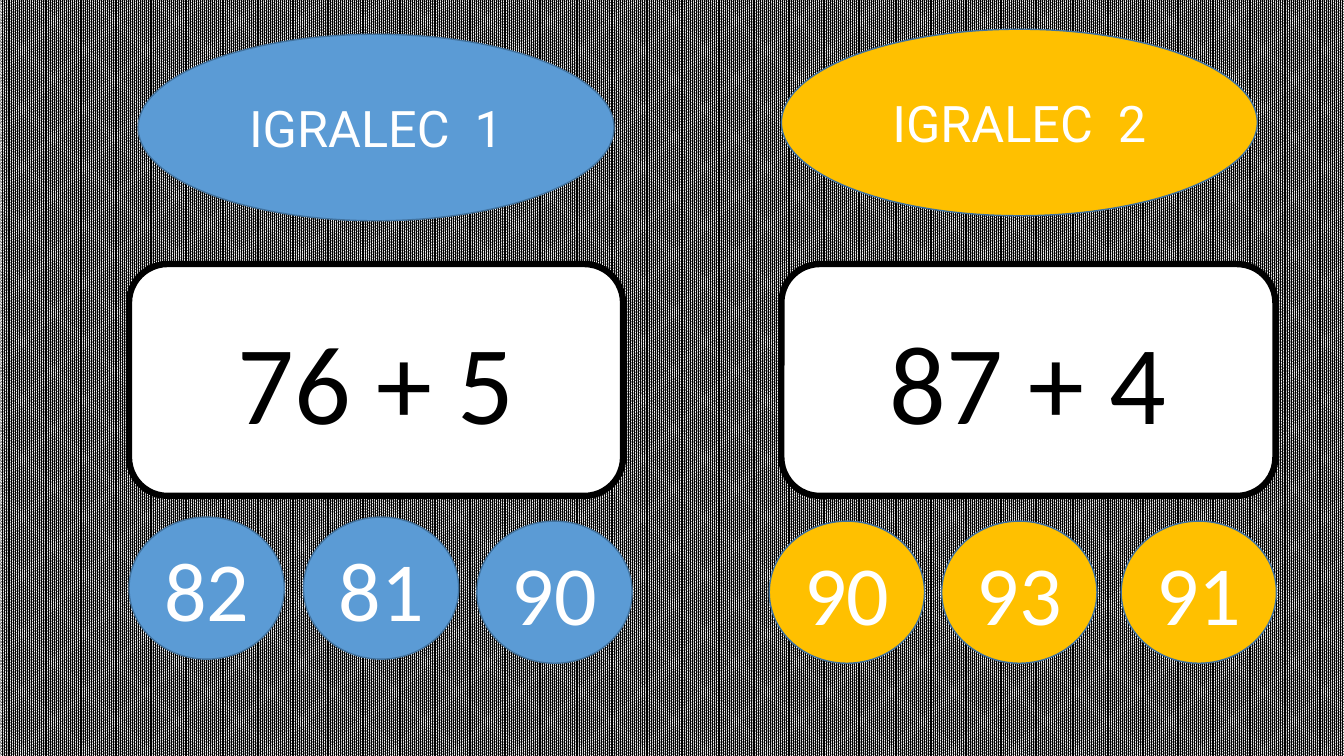
from dataclasses import dataclass

from pptx import Presentation
from pptx.dml.color import RGBColor
from pptx.enum.dml import MSO_PATTERN
from pptx.enum.shapes import MSO_SHAPE as Preset
from pptx.enum.text import MSO_ANCHOR as Anchor, PP_ALIGN as Align
from pptx.util import Inches, Pt


@dataclass(frozen=True)
class Theme:
    black: RGBColor = RGBColor.from_string("000000")
    white: RGBColor = RGBColor.from_string("FFFFFF")
    blue: RGBColor = RGBColor.from_string("5B9BD5")
    gold: RGBColor = RGBColor.from_string("FFC000")
    outline: RGBColor = RGBColor.from_string("43739E")
    name_format = {"name": "Roboto", "size": Pt(36)}
    sum_format = {"name": "Calibri", "size": Pt(80)}
    answer_format = {"name": "Calibri", "size": Pt(60)}


THEME = Theme()

PLAYERS = [
    {
        "color": THEME.blue,
        "name": ("IGRALEC  1", 1.37, 0.34),
        "sum": ("76 + 5", 1.28, 2.62),
        "answers": [("82", 1.28, 5.13), ("81", 3.01, 5.13), ("90", 4.73, 5.17)],
    },
    {
        "color": THEME.gold,
        "name": ("IGRALEC  2", 7.75, 0.29),
        "sum": ("87 + 4", 7.75, 2.62),
        "answers": [("90", 7.63, 5.17), ("93", 9.34, 5.17), ("91", 11.12, 5.17)],
    },
]


def set_attributes(target, values):
    for name, value in values.items():
        setattr(target, name, value)


def add_label(page, preset, item, size, fill, line, line_width, text_color, font_format):
    text, left, top = item
    shape = page.shapes.add_shape(preset, *map(Inches, (left, top, *size)))
    shape.shadow.inherit = False
    shape.fill.solid()
    shape.fill.fore_color.rgb = fill
    shape.line.color.rgb = line
    shape.line.width = Pt(line_width)
    set_attributes(shape.text_frame, {"word_wrap": True, "vertical_anchor": Anchor.MIDDLE})
    para = shape.text_frame.paragraphs[0]
    para.alignment = Align.CENTER
    span = para.add_run()
    span.text = text
    set_attributes(span.font, font_format)
    span.font.color.rgb = text_color


def add_oval(page, item, size, color, font_format):
    add_label(page, Preset.OVAL, item, size, color, THEME.outline, 1, THEME.white, font_format)


def add_sum_card(page, item):
    add_label(page, Preset.ROUNDED_RECTANGLE, item, (4.9, 2.3), THEME.white,
              THEME.black, 4.5, THEME.black, THEME.sum_format)


def add_player(page, player):
    add_sum_card(page, player["sum"])
    add_oval(page, player["name"], (4.72, 1.85), player["color"], THEME.name_format)
    for answer in player["answers"]:
        add_oval(page, answer, (1.54, 1.41), player["color"], THEME.answer_format)


def paint_background(page):
    fill = page.background.fill
    fill.patterned()
    fill.pattern = MSO_PATTERN.PERCENT_90
    fill.fore_color.rgb = THEME.black
    fill.back_color.rgb = THEME.white


def main():
    deck = Presentation()
    set_attributes(deck, {"slide_width": Inches(13.33), "slide_height": Inches(7.5)})
    page = deck.slides.add_slide(deck.slide_layouts[6])
    paint_background(page)
    for player in PLAYERS:
        add_player(page, player)
    deck.save("out.pptx")


if __name__ == "__main__":
    main()
